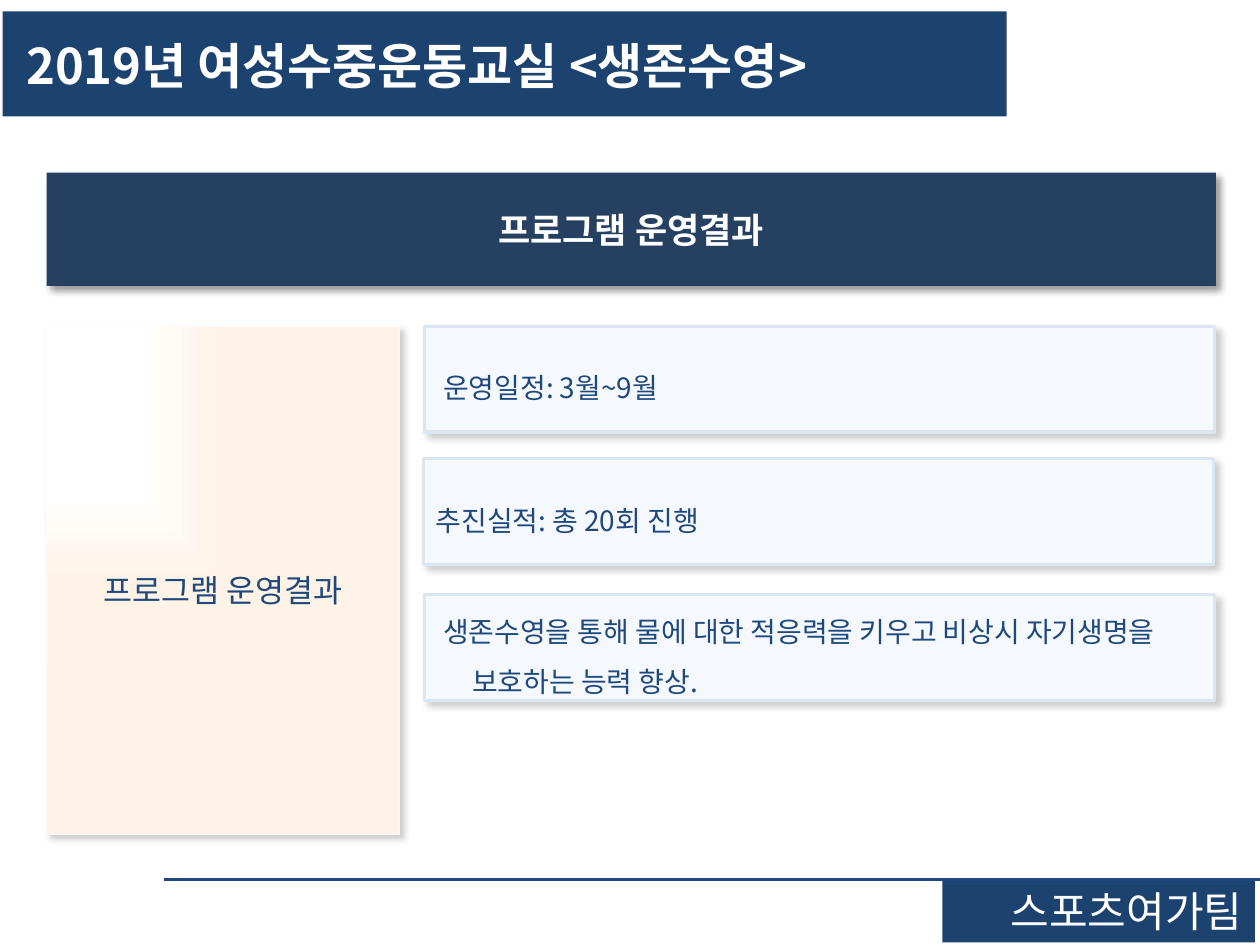
from dataclasses import dataclass

from lxml import etree
from pptx import Presentation
from pptx.dml.color import RGBColor
from pptx.enum.shapes import MSO_CONNECTOR, MSO_SHAPE
from pptx.enum.text import MSO_ANCHOR, MSO_AUTO_SIZE, PP_ALIGN
from pptx.oxml.ns import qn
from pptx.util import Inches, Pt

RECT = MSO_SHAPE.RECTANGLE
STRAIGHT = MSO_CONNECTOR.STRAIGHT
TOP, MIDDLE = MSO_ANCHOR.TOP, MSO_ANCHOR.MIDDLE
GROW, FIXED = MSO_AUTO_SIZE.SHAPE_TO_FIT_TEXT, MSO_AUTO_SIZE.NONE
LEFT, CENTER, RIGHT = PP_ALIGN.LEFT, PP_ALIGN.CENTER, PP_ALIGN.RIGHT

FONT = "Noto Sans CJK KR"
NAVY = "1C4270"
BLUE = "1F497D"
WHITE = "FFFFFF"


@dataclass
class Panel:
    text: str
    box: tuple[float, float, float, float]
    fill: str
    size: int
    color: str = WHITE
    bold: bool = False
    align: PP_ALIGN = CENTER
    anchor: MSO_ANCHOR = MIDDLE
    auto_size: MSO_AUTO_SIZE = FIXED
    spacing: float = 1.0
    before_pct: int = 0
    indent: tuple[float, float] = (0, 0)
    line: str = ""
    line_width: float = 0
    shadow_alpha: int = 0


def rgb(value: str) -> RGBColor:
    return RGBColor.from_string(value)


def add_node(parent, tag: str, **attrs):
    return etree.SubElement(parent, qn(tag), {k: str(v) for k, v in attrs.items()})


def add_shadow(sp, alpha: int) -> None:
    effects = sp._element.spPr.find(qn("a:effectLst"))
    shadow = add_node(effects, "a:outerShdw", blurRad=Pt(4), dist=Pt(3),
                      dir=45 * 60000, algn="tl", rotWithShape=0)
    color = add_node(shadow, "a:srgbClr", val="000000")
    add_node(color, "a:alpha", val=alpha * 1000)


def set_corner_gradient(sp, stops: list[tuple[float, str]]) -> None:
    sp.fill.gradient()
    for stop, (position, color) in zip(sp.fill.gradient_stops, stops):
        stop.position = position
        stop.color.rgb = rgb(color)
    grad = sp._element.spPr.find(qn("a:gradFill"))
    grad.remove(grad.find(qn("a:lin")))
    path = add_node(grad, "a:path", path="rect")
    add_node(path, "a:fillToRect", r=100000, b=100000)


def write_text(sp, panel: Panel) -> None:
    tf = sp.text_frame
    frame_format = {
        "word_wrap": True,
        "auto_size": panel.auto_size,
        "vertical_anchor": panel.anchor,
        "margin_left": Inches(0.1),
        "margin_right": Inches(0.1),
        "margin_top": Inches(0.05),
        "margin_bottom": Inches(0.05),
    }
    for name, value in frame_format.items():
        setattr(tf, name, value)
    p = tf.paragraphs[0]
    p.alignment = panel.align
    p.line_spacing = panel.spacing
    pPr = p._p.get_or_add_pPr()
    if panel.before_pct:
        before = add_node(pPr, "a:spcBef")
        add_node(before, "a:spcPct", val=panel.before_pct * 1000)
    margin, first = panel.indent
    pPr.set("marL", str(Inches(margin)))
    pPr.set("indent", str(Inches(first)))
    r = p.add_run()
    r.text = panel.text
    font_format = {"name": FONT, "size": Pt(panel.size), "bold": panel.bold}
    for name, value in font_format.items():
        setattr(r.font, name, value)
    r.font.color.rgb = rgb(panel.color)
    add_node(r._r.get_or_add_rPr(), "a:ea", typeface=FONT)


def style_panel(sp, panel: Panel) -> None:
    sp.left, sp.top, sp.width, sp.height = map(Inches, panel.box)
    sp.fill.solid()
    sp.fill.fore_color.rgb = rgb(panel.fill)
    if panel.line:
        sp.line.color.rgb = rgb(panel.line)
        sp.line.width = Pt(panel.line_width)
    else:
        sp.line.fill.background()
    sp.shadow.inherit = False
    if panel.shadow_alpha:
        add_shadow(sp, panel.shadow_alpha)
    write_text(sp, panel)


def add_panel(s, panel: Panel):
    sp = s.shapes.add_shape(RECT, *map(Inches, panel.box))
    style_panel(sp, panel)
    return sp


def make_card(text: str, left: float, top: float, indent: tuple[float, float]) -> Panel:
    return Panel(text, (left, top, 6.27, 0.84), "F5F9FD", 16, BLUE, align=LEFT,
                 spacing=1.5, indent=indent, line="DCE6F2", line_width=2,
                 shadow_alpha=20)


TITLE = Panel(" 2019년 여성수중운동교실 <생존수영>", (0.02, 0.09, 7.97, 0.71), NAVY, 28,
              bold=True, align=LEFT, anchor=TOP, auto_size=GROW, spacing=1.3,
              before_pct=50)
HEADER = Panel("프로그램 운영결과", (0.37, 1.37, 9.28, 0.9), "254061", 20, bold=True,
               shadow_alpha=40)
SIDE = Panel("프로그램 운영결과", (0.37, 2.59, 2.8, 4.03), "FEF3E6", 18, BLUE,
             spacing=1.5, line="FFFCFA", line_width=0.5, shadow_alpha=20)
TEAM = Panel("스포츠여가팀", (7.48, 6.98, 2.48, 0.5), NAVY, 24, align=RIGHT,
             anchor=TOP, auto_size=GROW, before_pct=50)
CARDS = [
    make_card(" 운영일정: 3월~9월", 3.37, 2.59, (0.5, -0.5)),
    make_card("추진실적: 총 20회 진행", 3.36, 3.64, (0.5, -0.5)),
    make_card(" 생존수영을 통해 물에 대한 적응력을 키우고 비상시 자기생명을 보호하는 능력 향상.",
              3.37, 4.72, (0.28, -0.39)),
]


def main() -> None:
    prs = Presentation()
    prs.slide_width, prs.slide_height = Inches(10), Inches(7.5)
    s = prs.slides.add_slide(prs.slide_layouts[5])
    style_panel(s.shapes.title, TITLE)

    side = add_panel(s, SIDE)
    set_corner_gradient(side, [(0.53, WHITE), (1.0, SIDE.fill)])
    for panel in (HEADER, TEAM, *CARDS):
        add_panel(s, panel)

    rule = s.shapes.add_connector(STRAIGHT, Inches(10), Inches(6.98),
                                  Inches(1.3), Inches(6.98))
    rule.line.color.rgb = rgb(BLUE)
    rule.line.width = Pt(1.5)
    add_node(rule._element.spPr, "a:effectLst")

    prs.save("out.pptx")


if __name__ == "__main__":
    main()
